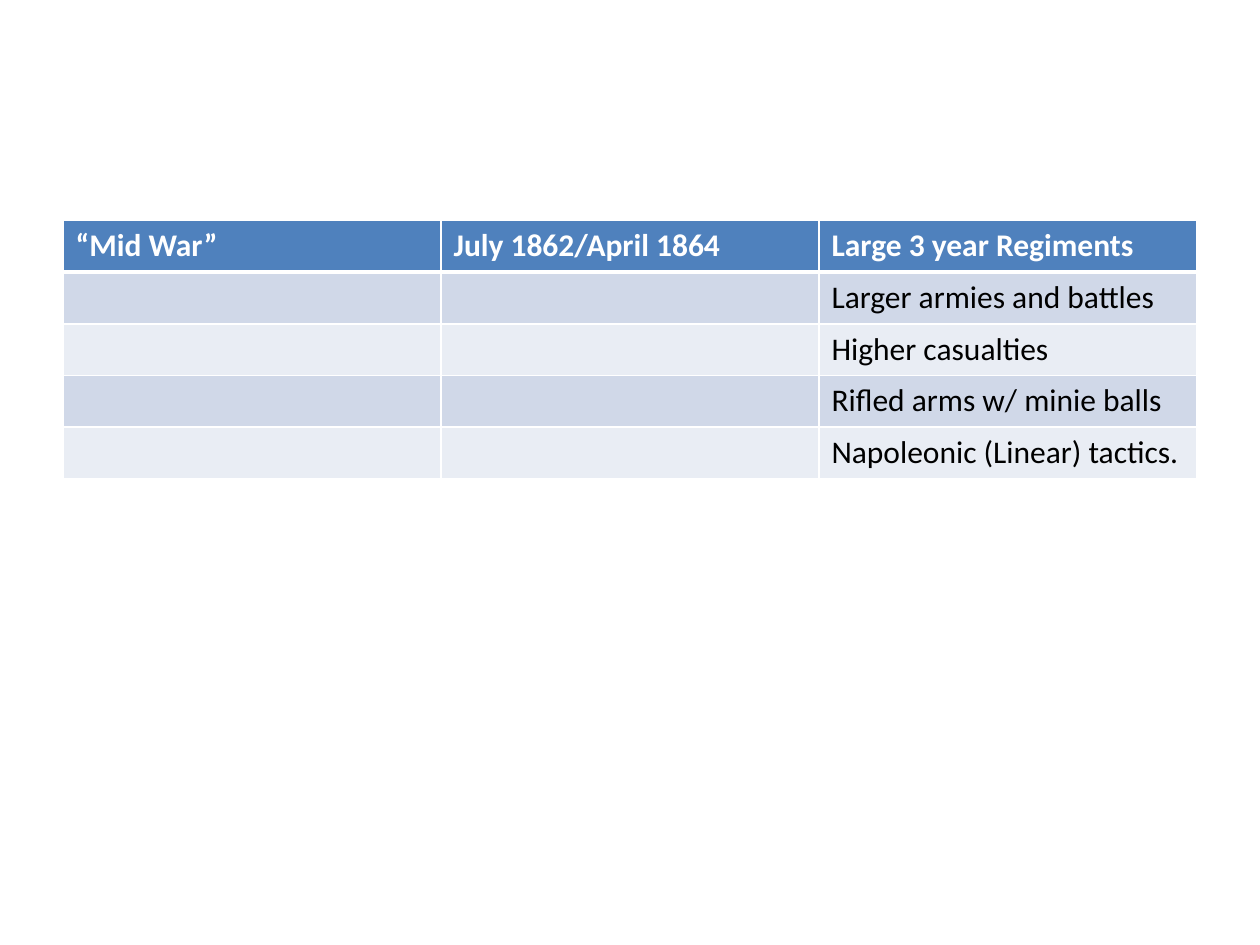
"""Build a slide with a table on the mid-war period."""
import pptx
import pptx.dml.color
import pptx.oxml
import pptx.oxml.ns
import pptx.util
from pptx.util import Inches


def rgb(value):
    return pptx.dml.color.RGBColor.from_string(value)


def add_border(cell, side, width):
    cell._tc.get_or_add_tcPr().append(pptx.oxml.parse_xml(
        f'<a:ln{side} {pptx.oxml.ns.nsdecls("a")} w="{pptx.util.Pt(width)}">'
        f'<a:solidFill><a:srgbClr val="FFFFFF"/></a:solidFill></a:ln{side}>'))


rows = [
    ["“Mid War”", "July 1862/April 1864", "Large 3 year Regiments"],
    ["", "", "Larger armies and battles"],
    ["", "", "Higher casualties"],
    ["", "", "Rifled arms w/ minie balls"],
    ["", "", "Napoleonic (Linear) tactics."],
]
row_height = Inches(0.41)

prs = pptx.Presentation()
prs.slide_width = Inches(10)
prs.slide_height = Inches(7.5)
s = prs.slides.add_slide(prs.slide_layouts[6])

table = s.shapes.add_table(len(rows), 3, Inches(0.5), Inches(1.75),
                           Inches(9), row_height * len(rows)).table
for column in table.columns:
    column.width = Inches(3)

for i, texts in enumerate(rows):
    header = i == 0
    table.rows[i].height = row_height
    fill = "4F81BD" if header else ("E9EDF4", "D0D8E8")[i % 2]
    for j, text in enumerate(texts):
        cell = table.cell(i, j)
        for side in "LRTB":
            thick = (header and side == "B") or (i == 1 and side == "T")
            add_border(cell, side, 3 if thick else 1)
        cell.fill.solid()
        cell.fill.fore_color.rgb = rgb(fill)
        if text:
            r = cell.text_frame.paragraphs[0].add_run()
            r.text = text
            r.font.name = "Calibri"
            r.font.size = pptx.util.Pt(18)
            r.font.bold = header
            r.font.color.rgb = rgb("FFFFFF" if header else "000000")

prs.save("out.pptx")
